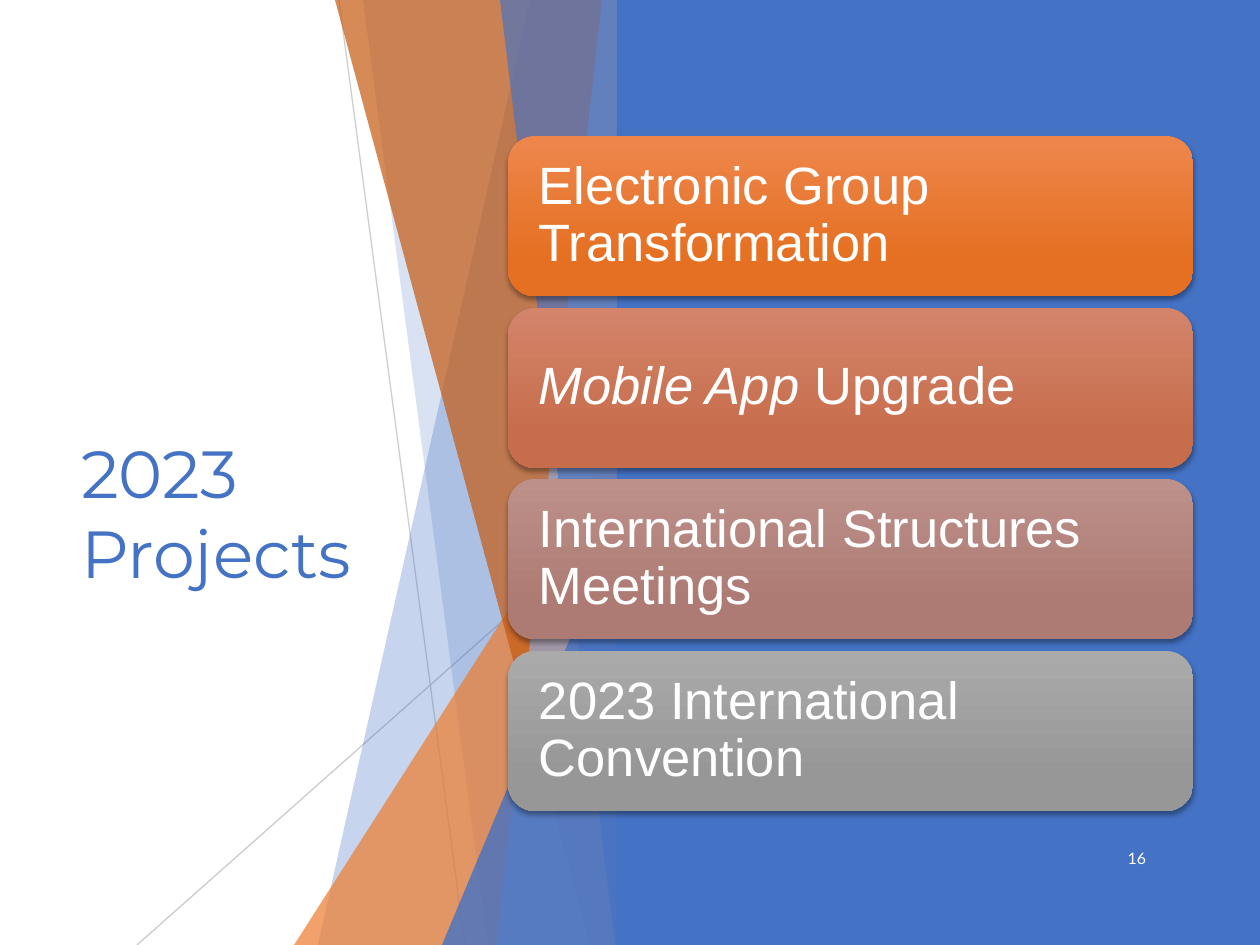
from lxml import etree
from pptx import Presentation
from pptx.dml.color import RGBColor
from pptx.enum.shapes import MSO_CONNECTOR, MSO_SHAPE
from pptx.enum.text import MSO_ANCHOR, MSO_AUTO_SIZE, PP_ALIGN
from pptx.oxml.ns import qn
from pptx.util import Emu, Pt

EMU_PER_PX = 914400 / 126
WIDTH, HEIGHT = 1260, 945
RECTANGLE = MSO_SHAPE.RECTANGLE
ROUNDED = MSO_SHAPE.ROUNDED_RECTANGLE
TRIANGLE = MSO_SHAPE.ISOSCELES_TRIANGLE
STRAIGHT = MSO_CONNECTOR.STRAIGHT
MIDDLE = MSO_ANCHOR.MIDDLE
LEFT, RIGHT = PP_ALIGN.LEFT, PP_ALIGN.RIGHT
NO_AUTOFIT = MSO_AUTO_SIZE.NONE

COLORS = {
    "blue": "4472C4",
    "light blue": "8FAADC",
    "orange": "ED7D31",
    "dark orange": "C55A11",
    "line": "BFBFBF",
    "white": "FFFFFF",
    "shadow": "000000",
}

FACET_RIGHT = 630
# colour, opacity, left edge at the top, left edge at the bottom
BACK_FACETS = [("blue", 30, 530, 318), ("blue", 20, 363, 488)]
FRONT_FACETS = [
    ("dark orange", 70, 335, 590),
    ("light blue", 70, 602, 496),
    ("blue", 65, 500, 615),
]

# text runs with their italic flag, gradient start, gradient end
CARDS = [
    ([("Electronic Group Transformation", False)], "EE864C", "E57021"),
    ([("Mobile App ", True), ("Upgrade", False)], "D3846A", "C76D4C"),
    ([("International Structures Meetings", False)], "BC918A", "AD7B73"),
    ([("2023 International Convention", False)], "AAAAAA", "979797"),
]
CARD_LEFT, CARD_TOP, CARD_WIDTH, CARD_HEIGHT = 508, 136, 685, 160
CARD_PITCH = 171.6


def px(value):
    return Emu(round(value * EMU_PER_PX))


def rgb(name):
    return RGBColor.from_string(COLORS.get(name, name))


def set_opacity(fill_parent, percent):
    color = next(fill_parent.iter(qn("a:srgbClr")))
    etree.SubElement(color, qn("a:alpha"), val=str(percent * 1000))


class SlideBuilder:
    def __init__(self, slide):
        self.slide = slide
        self.shapes = slide.shapes

    def style_run(self, run, size, font, color, italic=False):
        run.font.size = Pt(size)
        run.font.name = font
        run.font.color.rgb = rgb(color)
        run.font.italic = italic

    def set_frame(self, frame, margins):
        frame.word_wrap = True
        frame.auto_size = NO_AUTOFIT
        frame.vertical_anchor = MIDDLE
        (frame.margin_left, frame.margin_top,
         frame.margin_right, frame.margin_bottom) = map(px, margins)

    def paint(self, shape, color, opacity=100):
        shape.shadow.inherit = False
        shape.line.fill.background()
        shape.fill.solid()
        shape.fill.fore_color.rgb = rgb(color)
        if opacity < 100:
            set_opacity(shape.element.spPr, opacity)

    def title(self, text, left, top, width, height):
        shape = self.shapes.title
        shape.left, shape.top, shape.width, shape.height = map(
            px, (left, top, width, height))
        frame = shape.text_frame
        self.set_frame(frame, (13, 86, 13, 6))
        frame.text = text
        paragraph = frame.paragraphs[0]
        paragraph.alignment = LEFT
        self.style_run(paragraph.runs[0], 38, "Montserrat", "blue")

    def line(self, start, end, opacity):
        connector = self.shapes.add_connector(
            STRAIGHT, *map(px, start + end))
        connector.line.width = Pt(0.75)
        connector.line.color.rgb = rgb("line")
        properties = connector.element.spPr
        set_opacity(properties, opacity)
        etree.SubElement(properties, qn("a:effectLst"))

    def facet(self, color, opacity, top_x, bottom_x):
        """Draw a full-height band with a slanted left edge."""
        builder = self.shapes.build_freeform(top_x, 0, scale=EMU_PER_PX)
        builder.add_line_segments(
            [(FACET_RIGHT, 0), (FACET_RIGHT, HEIGHT), (bottom_x, HEIGHT)])
        self.paint(builder.convert_to_shape(), color, opacity)

    def triangle(self, color, opacity, left, top):
        """Draw a right triangle in the corner below the facets."""
        shape = self.shapes.add_shape(
            TRIANGLE, *map(px, (left, top, FACET_RIGHT - left, HEIGHT - top)))
        shape.adjustments[0] = 1
        self.paint(shape, color, opacity)

    def panel(self, color, left):
        shape = self.shapes.add_shape(
            RECTANGLE, *map(px, (left, 0, WIDTH - left, HEIGHT)))
        self.paint(shape, color)

    def page_number(self, text, left, top, width, height):
        box = self.shapes.add_textbox(*map(px, (left, top, width, height)))
        frame = box.text_frame
        self.set_frame(frame, (13, 6, 13, 6))
        frame.text = text
        paragraph = frame.paragraphs[0]
        paragraph.alignment = RIGHT
        paragraph.space_after = Pt(6)
        self.style_run(paragraph.runs[0], 9, "Lato", "white")

    def card(self, top, runs, start_color, end_color):
        shape = self.shapes.add_shape(
            ROUNDED, *map(px, (CARD_LEFT, top, CARD_WIDTH, CARD_HEIGHT)))
        shape.line.fill.background()
        shape.fill.gradient()
        shape.fill.gradient_angle = 270
        for stop, color, position in zip(
                shape.fill.gradient_stops, (start_color, end_color), (0, 0.78)):
            stop.color.rgb = rgb(color)
            stop.position = position
        self.drop_shadow(shape)
        self.set_frame(shape.text_frame, (23, 23, 23, 23))
        paragraph = shape.text_frame.paragraphs[0]
        paragraph.alignment = LEFT
        paragraph.line_spacing = 0.9
        for text, italic in runs:
            run = paragraph.add_run()
            run.text = text
            self.style_run(run, 30, "Arial", "white", italic)

    def drop_shadow(self, shape):
        shape.shadow.inherit = False
        effects = shape.element.spPr.find(qn("a:effectLst"))
        shadow = etree.SubElement(
            effects, qn("a:outerShdw"), blurRad=str(Pt(3)), dist=str(Pt(2)),
            dir="5400000", algn="ctr", rotWithShape="0")
        etree.SubElement(shadow, qn("a:srgbClr"), val=COLORS["shadow"])
        set_opacity(shadow, 35)


def main():
    presentation = Presentation()
    presentation.slide_width = px(WIDTH)
    presentation.slide_height = px(HEIGHT)
    slide = presentation.slides.add_slide(presentation.slide_layouts[5])
    builder = SlideBuilder(slide)

    builder.title("2023 Projects", 68, 190, 367, 564)
    builder.line((339, 0), (465, HEIGHT), 75)
    builder.line((FACET_RIGHT, 508), (137, HEIGHT), 80)
    for facet in BACK_FACETS:
        builder.facet(*facet)
    builder.triangle("orange", 72, 294, 420)
    for facet in FRONT_FACETS:
        builder.facet(*facet)
    builder.triangle("blue", 80, 442, 495)
    builder.panel("blue", 617)
    builder.page_number("16", 1089, 833, 70, 50)
    for index, card in enumerate(CARDS):
        builder.card(round(CARD_TOP + index * CARD_PITCH), *card)

    presentation.save("out.pptx")


if __name__ == "__main__":
    main()
